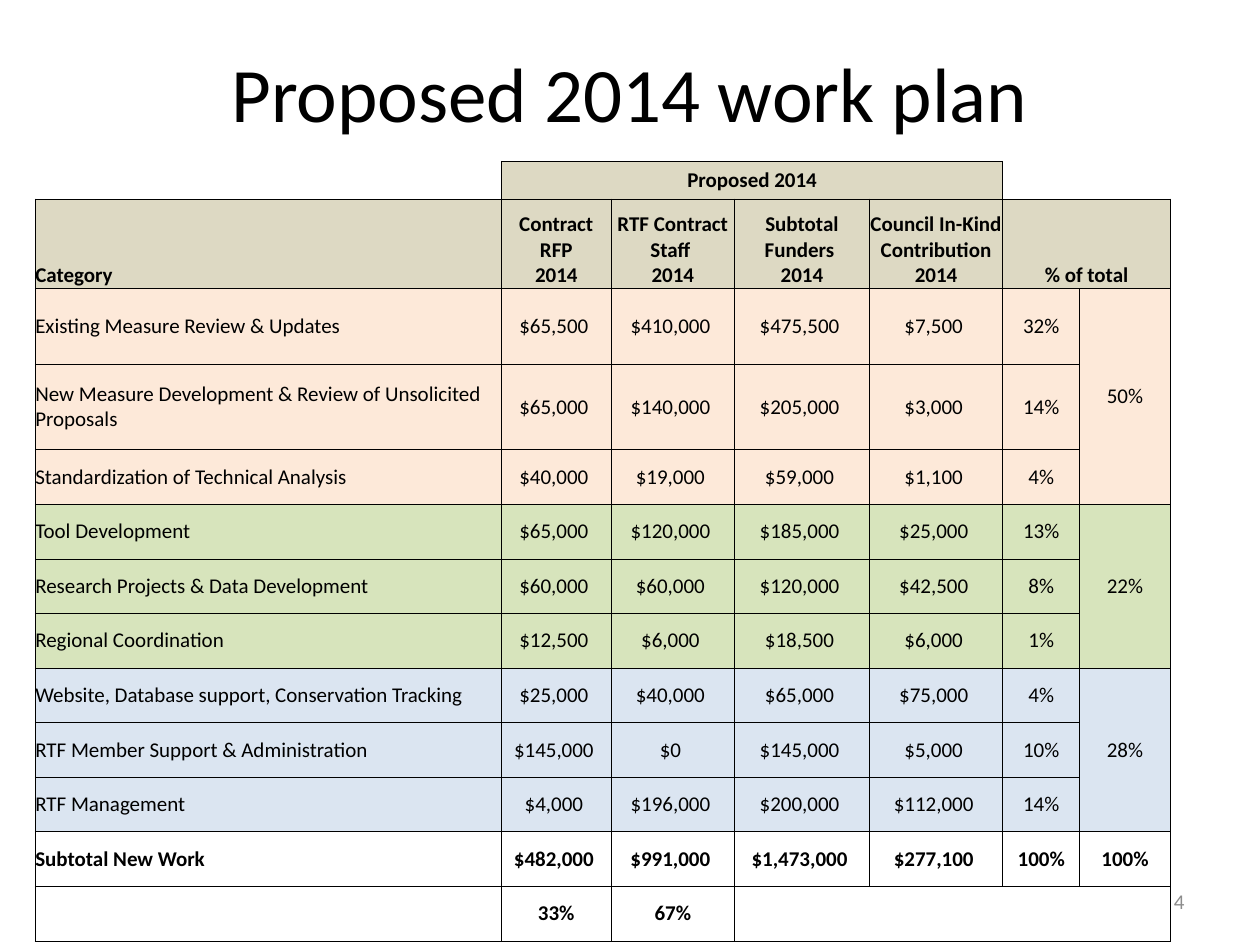
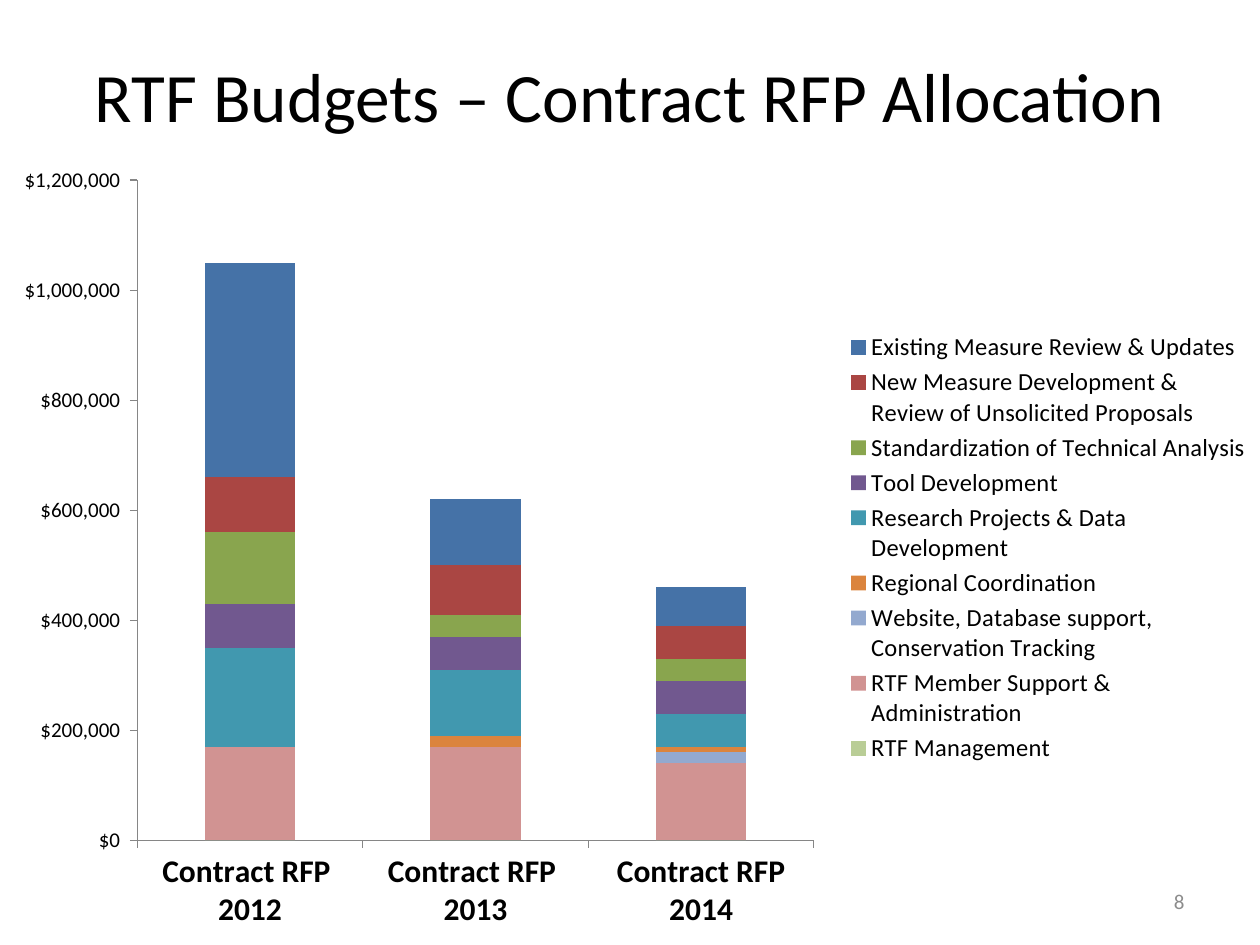
"""Build two slides on a yearly work plan and its contract budget."""
from dataclasses import dataclass

from lxml import etree
from pptx import Presentation
from pptx import util as u
from pptx.chart.data import CategoryChartData
from pptx.dml.color import RGBColor
from pptx.enum import chart as ch
from pptx.enum import text as tx
from pptx.oxml import ns, parse_xml


@dataclass(frozen=True)
class Theme:
    """Colours, font and type sizes of the deck."""
    font: str = "Calibri"
    ink: str = "000000"
    mute: str = "8C8C8C"
    axis: str = "868686"
    head: str = "DDD9C3"
    bands: tuple = ("FDE9D9", "D7E4BC", "DBE5F1")
    bars: tuple = ("4572A7", "AA4643", "89A54E", "71588F", "4198AF",
                   "DB843D", "93A9CF", "D19392", "B9CD96")
    title: float = 44
    small: float = 39.6
    body: float = 12
    key: float = 14
    label: float = 18


T = Theme()
MID, LOW = tx.MSO_ANCHOR.MIDDLE, tx.MSO_ANCHOR.BOTTOM
LEFT, MIDST, RIGHT = tx.PP_ALIGN.LEFT, tx.PP_ALIGN.CENTER, tx.PP_ALIGN.RIGHT

PLAN = [
    ("Existing Measure Review & Updates", 65500, 410000, 7500),
    ("New Measure Development & Review of Unsolicited Proposals",
     65000, 140000, 3000),
    ("Standardization of Technical Analysis", 40000, 19000, 1100),
    ("Tool Development", 65000, 120000, 25000),
    ("Research Projects & Data Development", 60000, 60000, 42500),
    ("Regional Coordination", 12500, 6000, 6000),
    ("Website, Database support, Conservation Tracking", 25000, 40000, 75000),
    ("RTF Member Support & Administration", 145000, 0, 5000),
    ("RTF Management", 4000, 196000, 112000),
]
HEADS = ["Category", "Contract RFP\n2014", "RTF Contract Staff \n2014",
         "Subtotal Funders \n2014", "Council In-Kind Contribution 2014",
         "% of total", ""]
PAST = [(390000, 120000), (100000, 90000), (130000, 40000), (80000, 60000),
        (180000, 120000), (0, 20000), (0, 0), (170000, 170000), (0, 0)]
GROUP = 3
WIDTHS = [3.7, 0.87, 0.98, 1.07, 1.06, 0.61, 0.72]
TALL = [0.3, 0.71, 0.6, 0.68]
HEIGHTS = TALL + [(6.19 - sum(TALL)) / 9] * 9
CHART = (0, 1.2, 10, 6.3)


def style(font, size, color=T.ink, bold=False):
    """Set the face, size, colour and weight of a font."""
    font.name, font.size, font.bold = T.font, u.Pt(size), bold
    font.color.rgb = RGBColor.from_string(color)


def write(frame, words, size, align, color=T.ink, bold=False):
    """Write words into a frame, one run for each line."""
    para = frame.paragraphs[0]
    para.alignment = align
    for i, line in enumerate(words.split("\n")):
        if i:
            para.add_line_break()
        run = para.add_run()
        run.text = line
        style(run.font, size, color, bold)


def label(slide, box, words, size, align, color=T.ink):
    """Add a wrapped text box, centred in height."""
    frame = slide.shapes.add_textbox(*map(u.Inches, box)).text_frame
    frame.word_wrap = True
    frame.vertical_anchor = MID
    write(frame, words, size, align, color)


def page(deck, title, size, height):
    """Add a blank slide with its title."""
    slide = deck.slides.add_slide(deck.slide_layouts[6])
    label(slide, (0.5, 0.3, 9, height), title, size, MIDST)
    return slide


def number(slide, count):
    """Add the page number."""
    label(slide, (7.17, 6.95, 2.33, 0.4), str(count), T.body, RIGHT, T.mute)


def edge(cell, row, col):
    """Draw the borders that a cell has at its place in the grid."""
    sides = {0: "RB", 5: "LB", 6: "B"}.get(col, "LRTB") if row == 0 else "LRTB"
    props = cell._tc.get_or_add_tcPr()
    for side in "LRTB":
        thick = row > 0 and (col, side) in ((3, "R"), (4, "L"))
        line = etree.SubElement(props, ns.qn(f"a:ln{side}"),
                                w=str(u.Pt(1 if thick else 0.5)))
        if side in sides:
            fill = etree.SubElement(line, ns.qn("a:solidFill"))
            etree.SubElement(fill, ns.qn("a:srgbClr"), val=T.ink)
        else:
            etree.SubElement(line, ns.qn("a:noFill"))


def shade(row, col):
    """Give the fill of a cell, or None where it is clear."""
    if row == 0:
        return T.head if 1 <= col <= 4 else None
    if row == 1:
        return T.head
    band = (row - 2) // GROUP
    return T.bands[band] if band < len(T.bands) else None


def fill_cell(cell, row, col, words):
    """Style one table cell and write its words."""
    edge(cell, row, col)
    color = shade(row, col)
    if color:
        cell.fill.solid()
        cell.fill.fore_color.rgb = RGBColor.from_string(color)
    else:
        cell.fill.background()
    cell.margin_left = cell.margin_right = 0
    cell.margin_top = cell.margin_bottom = 0
    cell.vertical_anchor = LOW if row == 1 else MID
    bold = not 2 <= row < 2 + len(PLAN)
    write(cell.text_frame, words, T.body, MIDST if col else LEFT, bold=bold)


def plan_rows():
    """Work out the words of every table row from the plan."""
    money = "${:,} ".format
    rfp, staff, kind = (sum(item[i] for item in PLAN) for i in (1, 2, 3))
    total = rfp + staff
    rows = [["", "Proposed 2014"] + [""] * 5, HEADS]
    for i, (name, deal, crew, gift) in enumerate(PLAN):
        part = sum(a + b for _, a, b, _ in PLAN[i:i + GROUP]) / total
        rows.append([name, *map(money, (deal, crew, deal + crew, gift)),
                     f"{(deal + crew) / total:.0%}",
                     "" if i % GROUP else f"{part:.0%}"])
    rows.append(["Subtotal New Work", *map(money, (rfp, staff, total, kind)),
                 "100%", "100%"])
    rows.append(["", f"{rfp / total:.0%}", f"{staff / total:.0%}"] + [""] * 4)
    return rows


def plan_table(slide):
    """Add the work plan table with its merged cells."""
    box = (0.28, 1.28, sum(WIDTHS), sum(HEIGHTS))
    table = slide.shapes.add_table(len(HEIGHTS), len(WIDTHS),
                                   *map(u.Inches, box)).table
    table.first_row = table.horz_banding = False
    for col, width in zip(table.columns, WIDTHS):
        col.width = u.Inches(width)
    for row, height in zip(table.rows, HEIGHTS):
        row.height = u.Inches(height)
    for r, row in enumerate(plan_rows()):
        for c, words in enumerate(row):
            fill_cell(table.cell(r, c), r, c, words)
    spans = [(0, 1, 0, 4), (0, 5, 0, 6), (1, 5, 1, 6), (12, 3, 12, 6)]
    spans += [(r, 6, r + GROUP - 1, 6) for r in range(2, 11, GROUP)]
    for top, left, low, right in spans:
        table.cell(top, left).merge(table.cell(low, right))


def place(node, box, inner=False):
    """Fix a chart part at a box in inches within the chart's frame."""
    for old in node.findall(ns.qn("c:layout")):
        node.remove(old)
    target = '<c:layoutTarget val="inner"/>' if inner else ""
    modes = "".join(f'<c:{k}Mode val="edge"/>' for k in "xy")
    sizes = "".join(f'<c:{k} val="{v / full:.4f}"/>'
                    for k, v, full in zip("xywh", box, CHART[2:] * 2))
    layout = parse_xml(f'<c:layout {ns.nsdecls("c")}><c:manualLayout>{target}'
                       f'{modes}{sizes}</c:manualLayout></c:layout>')
    node.insert(0 if inner else 1, layout)


def set_axis(axis, size, bold=False):
    """Style a chart axis."""
    axis.has_major_gridlines = False
    axis.major_tick_mark = ch.XL_TICK_MARK.OUTSIDE
    axis.format.line.color.rgb = RGBColor.from_string(T.axis)
    style(axis.tick_labels.font, size, bold=bold)


def budget_chart(slide):
    """Add the stacked columns of contract budgets by year."""
    data = CategoryChartData()
    data.categories = ["Contract RFP \n2012", "Contract RFP \n2013",
                       "Contract RFP\n2014"]
    for item, past in reversed(list(zip(PLAN, PAST))):
        data.add_series(item[0], (*past, round(item[1], -4)))
    chart = slide.shapes.add_chart(ch.XL_CHART_TYPE.COLUMN_STACKED,
                                   *map(u.Inches, CHART), data).chart
    chart.has_title = False
    style(chart.font, 10)
    plot = chart.plots[0]
    plot.gap_width, plot.overlap = 150, 100
    plot.vary_by_categories = False
    for series, color in zip(plot.series, reversed(T.bars)):
        series.format.fill.solid()
        series.format.fill.fore_color.rgb = RGBColor.from_string(color)
    set_axis(chart.category_axis, T.label, True)
    axis = chart.value_axis
    set_axis(axis, T.body)
    axis.minimum_scale, axis.maximum_scale = 0, 1200000
    axis.major_unit = 200000
    axis.tick_labels.number_format = '"$"#,##0_);\\("$"#,##0\\)'
    axis.tick_labels.number_format_is_linked = False
    chart.has_legend = True
    key = chart.legend
    key.position = ch.XL_LEGEND_POSITION.RIGHT
    key.include_in_layout = False
    style(key.font, T.key)
    place(key._element, (6.72, 1.4, 3.2, 3.5))
    place(plot._element.getparent(), (1.09, 0.23, 5.37, 5.24), True)


def main():
    """Build and save the deck."""
    deck = Presentation()
    deck.slide_width, deck.slide_height = u.Inches(10), u.Inches(7.5)
    slide = page(deck, "Proposed 2014 work plan", T.title, 0.85)
    plan_table(slide)
    number(slide, 4)
    slide = page(deck, "RTF Budgets – Contract RFP Allocation", T.small, 0.9)
    budget_chart(slide)
    number(slide, 8)
    deck.save("out.pptx")


if __name__ == "__main__":
    main()
